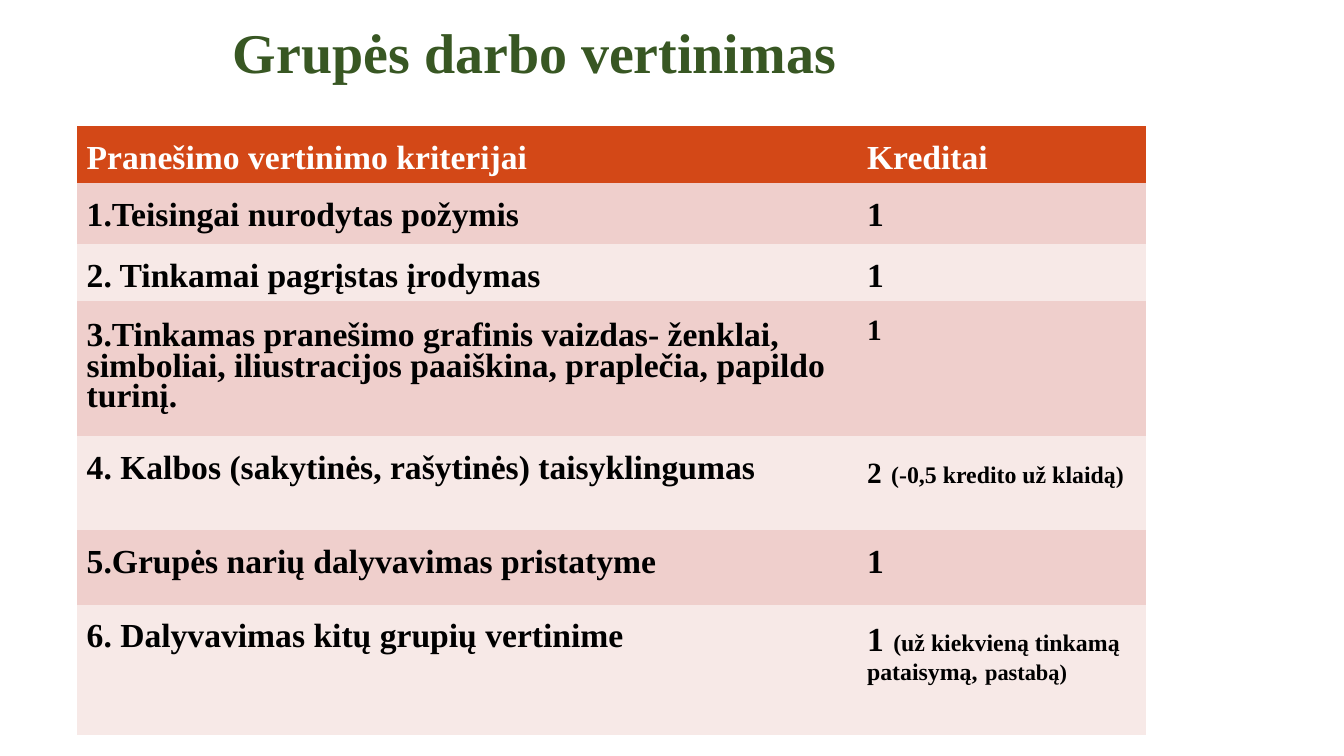
from dataclasses import dataclass

from pptx import Presentation
from pptx import util as u
from pptx.dml.color import RGBColor
from pptx.enum import text
from pptx.oxml.ns import qn
from pptx.table import _Cell

FONT = "Times New Roman"
NO_GRID_STYLE = "{2D5ABB26-0587-4C30-8999-92F81FD0307C}"
COLORS = {
    "title": "385723",
    "header": "D34817",
    "header_text": "FFFFFF",
    "body_text": "000000",
    "odd_row": "EFCFCC",
    "even_row": "F7E9E7",
}


@dataclass(frozen=True)
class Entry:
    runs: tuple[tuple[str, int], ...]
    top_margin: int = 18
    line_spacing: float = 0.84


@dataclass(frozen=True)
class Row:
    height: int
    criterion: Entry
    credits: Entry


def plain(content: str) -> Entry:
    return Entry(((content, 24),))


ROWS = [
    Row(57, plain("Pranešimo vertinimo kriterijai"), plain("Kreditai")),
    Row(60, plain("1.Teisingai nurodytas požymis"), plain("1")),
    Row(57, plain("2. Tinkamai pagrįstas įrodymas"), plain("1")),
    Row(
        134,
        Entry(
            ((
                "3.Tinkamas pranešimo grafinis vaizdas- ženklai, simboliai, "
                "iliustracijos paaiškina, praplečia, papildo turinį.",
                24,
            ),),
            21,
            0.82,
        ),
        Entry((("1", 21),), 17),
    ),
    Row(
        93,
        plain("4. Kalbos (sakytinės, rašytinės) taisyklingumas"),
        Entry((("2", 21), (" ", 27), ("(-0,5 kredito už klaidą)", 17)), 19, 0.82),
    ),
    Row(74, plain("5.Grupės narių dalyvavimas pristatyme"), plain("1")),
    Row(
        129,
        plain("6. Dalyvavimas kitų grupių vertinime"),
        Entry((
            ("1", 24),
            (" ", 27),
            ("(už kiekvieną tinkamą pataisymą,", 17),
            (" ", 21),
            ("pastabą)", 16),
        )),
    ),
]
COLUMN_WIDTHS = (774, 287)


def px(length: int) -> u.Emu:
    return u.Emu(length * 9144)


def color(name: str) -> RGBColor:
    return RGBColor.from_string(COLORS[name])


def style_font(font, color_name: str) -> None:
    font.name = FONT
    font.bold = True
    font.color.rgb = color(color_name)


def add_title(slide) -> None:
    title = slide.shapes.title
    title.left, title.top, title.width, title.height = map(px, (221, 0, 895, 94))
    frame = title.text_frame
    frame.text = "Grupės darbo vertinimas"
    frame.auto_size = text.MSO_AUTO_SIZE.NONE
    frame.vertical_anchor = text.MSO_ANCHOR.BOTTOM
    frame.margin_left = frame.margin_right = frame.margin_bottom = px(10)
    frame.margin_top = px(5)
    paragraph = frame.paragraphs[0]
    paragraph.alignment = text.PP_ALIGN.LEFT
    style_font(paragraph.font, "title")
    paragraph.font.size = u.Pt(40)


def fill_cell(cell: _Cell, entry: Entry, fill: str, text_color: str) -> None:
    cell.fill.solid()
    cell.fill.fore_color.rgb = color(fill)
    cell.margin_left = cell.margin_right = px(10)
    cell.margin_top, cell.margin_bottom = px(entry.top_margin), px(5)
    paragraph = cell.text_frame.paragraphs[0]
    paragraph.line_spacing = entry.line_spacing
    paragraph.space_before = u.Pt(5.8)
    style_font(paragraph.font, text_color)
    if len(entry.runs) == 1:
        paragraph.font.size = u.Pt(entry.runs[0][1])
    for content, size in entry.runs:
        run = paragraph.add_run()
        run.text = content
        if len(entry.runs) > 1:
            run.font.size = u.Pt(size)


def add_criteria_table(slide) -> None:
    frame = slide.shapes.add_table(
        len(ROWS), len(COLUMN_WIDTHS), px(76), px(125),
        px(sum(COLUMN_WIDTHS)), px(sum(row.height for row in ROWS)),
    )
    for style in frame.element.iter(qn("a:tableStyleId")):
        style.text = NO_GRID_STYLE
    table = frame.table
    for column, width in zip(table.columns, COLUMN_WIDTHS):
        column.width = px(width)
    for index, row in enumerate(ROWS):
        table.rows[index].height = px(row.height)
        if index == 0:
            fill, text_color = "header", "header_text"
        else:
            fill, text_color = "odd_row" if index % 2 else "even_row", "body_text"
        for column_index, entry in enumerate((row.criterion, row.credits)):
            fill_cell(table.cell(index, column_index), entry, fill, text_color)


def main() -> None:
    presentation = Presentation()
    presentation.slide_width, presentation.slide_height = px(1333), px(750)
    slide = presentation.slides.add_slide(presentation.slide_layouts[5])
    add_title(slide)
    add_criteria_table(slide)
    presentation.save("out.pptx")


if __name__ == "__main__":
    main()
